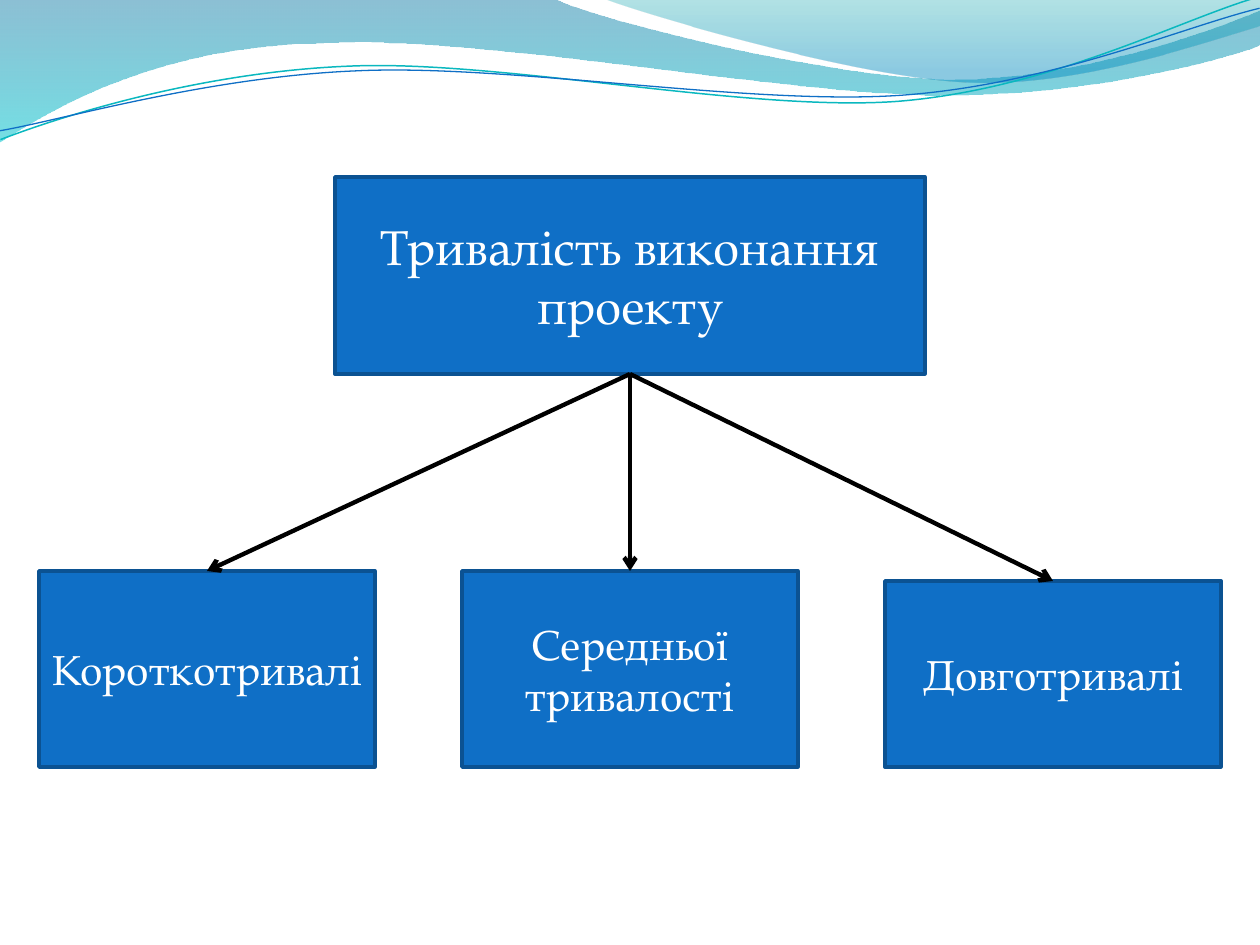
from dataclasses import dataclass

from lxml import etree
from pptx import Presentation
from pptx.dml.color import RGBColor
from pptx.enum.shapes import MSO_CONNECTOR, MSO_SHAPE
from pptx.enum.text import MSO_ANCHOR, PP_ALIGN
from pptx.oxml.ns import qn
from pptx.util import Emu, Pt

RECTANGLE = MSO_SHAPE.RECTANGLE
STRAIGHT = MSO_CONNECTOR.STRAIGHT
MIDDLE = MSO_ANCHOR.MIDDLE
CENTER = PP_ALIGN.CENTER

EMU_PER_PX = 914400 / 126
TOP_SITE, BOTTOM_SITE = 0, 2
STROKE_ROTATION = 357.3
FONT = "TeX Gyre Pagella"
COLORS = {
    "box": "0F6FC6",
    "box_border": "0B5292",
    "text": "FFFFFF",
    "arrow": "000000",
    "teal_line": "0AB8BF",
    "blue_line": "0F6FC6",
    "wave_top": "0074A1",
    "wave_bottom": "00C6CF",
    "crest_top": "00A1A9",
    "crest_bottom": "008BBF",
}

Point = tuple[int, int]


@dataclass(frozen=True)
class Outline:
    """A start point, then segments: one point is a line, three are a cubic curve."""
    start: Point
    segments: list[tuple[Point, ...]]


@dataclass(frozen=True)
class Stop:
    color: str
    position: float
    opacity: int


@dataclass(frozen=True)
class Wave:
    outline: Outline
    stops: tuple[Stop, Stop]


@dataclass(frozen=True)
class Stroke:
    outline: Outline
    color: str
    width: float


@dataclass(frozen=True)
class Box:
    label: str
    left: int
    top: int
    width: int
    height: int
    size: int


WAVES = [
    Wave(
        Outline((0, 0), [
            ((554, -1),),
            ((600, 21), (837, 79), (955, 79)),
            ((1075, 79), (1207, 33), (1260, 11)),
            ((1261, 45),),
            ((1239, 55), (1096, 96), (940, 95)),
            ((784, 95), (481, 35), (324, 43)),
            ((163, 45), (58, 105), (-1, 142)),
        ]),
        (Stop("wave_top", 0, 45), Stop("wave_bottom", 1, 55)),
    ),
    Wave(
        Outline((604, -1), [
            ((641, 14), (859, 78), (969, 82)),
            ((1079, 87), (1211, 40), (1260, 26)),
            ((1260, 0),),
        ]),
        (Stop("crest_top", 0, 30), Stop("crest_bottom", 0.8, 45)),
    ),
]
STROKES = [
    Stroke(
        Outline((-2, 110), [
            ((58, 90), (199, 52), (349, 53)),
            ((499, 53), (745, 118), (896, 114)),
            ((1049, 109), (1184, 45), (1260, 27)),
        ]),
        "teal_line", 0.85,
    ),
    Stroke(
        Outline((-2, 101), [
            ((57, 94), (207, 57), (357, 58)),
            ((509, 58), (750, 112), (902, 108)),
            ((1052, 104), (1188, 52), (1262, 38)),
        ]),
        "blue_line", 0.75,
    ),
]

DURATION = Box("Тривалість виконання проекту", 335, 177, 590, 197, 28)
ROW_LEFT, ROW_PITCH, ROW_BOTTOM, ROW_WIDTH = 39, 423, 767, 336
DURATION_KINDS = [
    Box(label, ROW_LEFT + i * ROW_PITCH, top, ROW_WIDTH, ROW_BOTTOM - top, 24)
    for i, (label, top) in enumerate([
        ("Короткотривалі", 571),
        ("Середньої тривалості", 571),
        ("Довготривалі", 581),
    ])
]


def px(length: int) -> Emu:
    return Emu(round(length * EMU_PER_PX))


def rgb(name: str) -> RGBColor:
    return RGBColor.from_string(COLORS[name])


def draw_outline(slide, outline: Outline, closed: bool):
    """Build straight legs through every point, then merge legs in threes into curves."""
    builder = slide.shapes.build_freeform(*map(px, outline.start))
    points = [point for segment in outline.segments for point in segment]
    builder.add_line_segments([(px(x), px(y)) for x, y in points], close=closed)
    shape = builder.convert_to_shape()
    shape.shadow.inherit = False
    legs = iter(list(shape._element.spPr.iter(qn("a:lnTo"))))
    for segment in outline.segments:
        first, *others = [next(legs) for _ in segment]
        if others:
            first.tag = qn("a:cubicBezTo")
        for leg in others:
            first.append(leg[0])
            leg.getparent().remove(leg)
    return shape


def draw_wave(slide, wave: Wave) -> None:
    shape = draw_outline(slide, wave.outline, closed=True)
    shape.line.fill.background()
    shape.fill.gradient()
    shape.fill.gradient_angle = 270
    for gradient_stop, stop in zip(shape.fill.gradient_stops, wave.stops):
        gradient_stop.color.rgb = rgb(stop.color)
        gradient_stop.position = stop.position
    for color, stop in zip(shape._element.spPr.iter(qn("a:srgbClr")), wave.stops):
        etree.SubElement(color, qn("a:alpha"), val=str(stop.opacity * 1000))


def draw_stroke(slide, stroke: Stroke) -> None:
    shape = draw_outline(slide, stroke.outline, closed=False)
    shape.rotation = STROKE_ROTATION
    shape.fill.background()
    shape.line.color.rgb = rgb(stroke.color)
    shape.line.width = Pt(stroke.width)


def draw_box(slide, box: Box):
    shape = slide.shapes.add_shape(
        RECTANGLE, px(box.left), px(box.top), px(box.width), px(box.height))
    shape.shadow.inherit = False
    shape.fill.solid()
    shape.fill.fore_color.rgb = rgb("box")
    shape.line.color.rgb = rgb("box_border")
    shape.line.width = Pt(2)
    frame = shape.text_frame
    frame.text = box.label
    frame.word_wrap = True
    frame.vertical_anchor = MIDDLE
    paragraph = frame.paragraphs[0]
    paragraph.alignment = CENTER
    font = paragraph.runs[0].font
    font.name, font.size = FONT, Pt(box.size)
    font.color.rgb = rgb("text")
    return shape


def draw_arrow(slide, parent, child) -> None:
    arrow = slide.shapes.add_connector(STRAIGHT, 0, 0, 0, 0)
    arrow.begin_connect(parent, BOTTOM_SITE)
    arrow.end_connect(child, TOP_SITE)
    arrow.line.color.rgb = rgb("arrow")
    arrow.line.width = Pt(2.5)
    line = arrow._element.spPr.find(qn("a:ln"))
    etree.SubElement(line, qn("a:tailEnd"), type="arrow")
    etree.SubElement(arrow._element.spPr, qn("a:effectLst"))


def main() -> None:
    prs = Presentation()
    prs.slide_width, prs.slide_height = px(1260), px(945)
    slide = prs.slides.add_slide(prs.slide_layouts[6])
    for wave in WAVES:
        draw_wave(slide, wave)
    for stroke in STROKES:
        draw_stroke(slide, stroke)
    duration = draw_box(slide, DURATION)
    kinds = [draw_box(slide, kind) for kind in DURATION_KINDS]
    for kind in kinds:
        draw_arrow(slide, duration, kind)
    prs.save("out.pptx")


if __name__ == "__main__":
    main()
